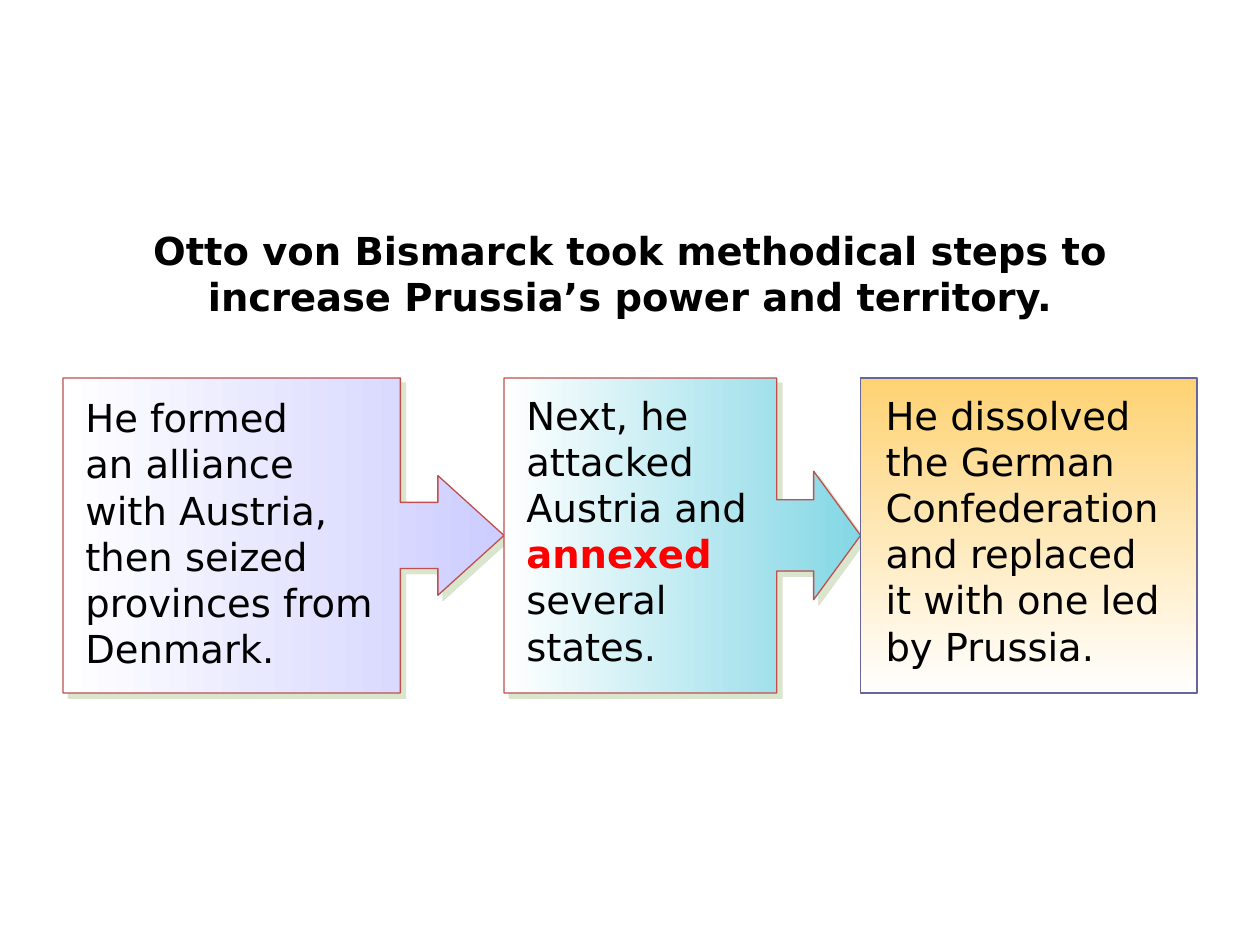
from lxml import etree
from pptx import Presentation
from pptx.dml.color import RGBColor
from pptx.enum import shapes, text
from pptx.oxml.ns import qn
from pptx.util import Inches, Pt

COLORS = {
    "black": "000000", "white": "FFFFFF", "key": "FF0000",
    "lilac": "CDCDFF", "teal": "83D7E5", "gold": "FED273",
    "red line": "C0504D", "violet line": "666699", "shadow": "ADC793",
}


def rgb(name):
    return RGBColor.from_string(COLORS[name])


class StepSlide:
    font = "DejaVu Sans"
    size = Pt(22)

    def __init__(self, page):
        self.page = page

    def place(self, item, left, top, width, height):
        item.left, item.top = Inches(left), Inches(top)
        item.width, item.height = Inches(width), Inches(height)

    def style(self, span, color="black", bold=False):
        span.font.name, span.font.size = self.font, self.size
        span.font.bold = bold
        span.font.color.rgb = rgb(color)

    def frame(self, box):
        frame = box.text_frame
        frame.word_wrap = True
        frame.auto_size = text.MSO_AUTO_SIZE.SHAPE_TO_FIT_TEXT
        frame.vertical_anchor = text.MSO_ANCHOR.TOP
        return frame

    def title(self, words, *area):
        box = self.page.shapes.title
        self.place(box, *area)
        frame = self.frame(box)
        frame.text = words
        para = frame.paragraphs[0]
        para.alignment = text.PP_ALIGN.CENTER
        self.style(para.runs[0], bold=True)

    def label(self, words, *area, key=None):
        box = self.page.shapes.add_textbox(*map(Inches, area))
        para = self.frame(box).paragraphs[0]
        para.text = words[0]
        for part in words[1:]:
            para.add_run().text = part
        for span in para.runs:
            is_key = span.text == key
            self.style(span, "key" if is_key else "black", is_key)

    def panel(self, kind, color, line, *area):
        """Shape whose gradient runs from a colour at its top to white."""
        shape = self.page.shapes.add_shape(kind, *map(Inches, area))
        shape.shadow.inherit = False
        shape.fill.gradient()
        shape.fill.gradient_angle = 270
        for stop, name in zip(shape.fill.gradient_stops, (color, "white")):
            stop.color.rgb = rgb(name)
        shape.line.color.rgb = rgb(line)
        shape.line.width = Pt(0.75)
        return shape

    def callout(self, color, adjustments, left, top, width, height):
        """Arrow callout turned to the right; the area is as it shows."""
        shift = (width - height) / 2
        shape = self.panel(shapes.MSO_SHAPE.UP_ARROW_CALLOUT, color, "red line",
                           left + shift, top - shift, height, width)
        shape.rotation = 90
        for index, value in enumerate(adjustments):
            shape.adjustments[index] = value
        self.shadow(shape)

    def shadow(self, shape):
        effects = shape._element.spPr.find(qn("a:effectLst"))
        outer = etree.SubElement(effects, qn("a:outerShdw"), blurRad="0",
                                 dist=str(Pt(4.2)), dir="2700000", algn="ctr", rotWithShape="0")
        tint = etree.SubElement(outer, qn("a:srgbClr"), val=COLORS["shadow"])
        etree.SubElement(tint, qn("a:alpha"), val="46000")


def main():
    deck = Presentation()
    deck.slide_width, deck.slide_height = Inches(10), Inches(7.5)
    slide = StepSlide(deck.slides.add_slide(deck.slide_layouts[5]))
    top, height = 3, 2.5

    # Heading
    slide.title("Otto von Bismarck took methodical steps to increase "
                "Prussia’s power and territory.", 0.5, 1.75, 9, 0.83)

    # Step 1: alliance
    slide.callout("lilac", (0.21, 0.19, 0.21, 0.765), 0.5, top, 3.5, height)
    slide.label(["He formed \nan alliance with Austria, \n"
                 "then seized provinces from Denmark."], 0.58, 3.08, 2.5, 2.3)

    # Step 2: annexation
    slide.callout("teal", (0.226, 0.204, 0.149, 0.765), 4, top, 2.83, height)
    slide.label(["Next, he attacked Austria and ", "annexed ", "several states."],
                4.08, 3.06, 2.05, 2.3, key="annexed ")

    # Step 3: Prussian leadership
    slide.panel(shapes.MSO_SHAPE.RECTANGLE, "gold", "violet line", 6.83, top, 2.67, height)
    slide.label(["He dissolved the German Confederation and replaced "
                 "it with one led by Prussia."], 6.93, 3.06, 2.48, 2.3)

    deck.save("out.pptx")


if __name__ == "__main__":
    main()
